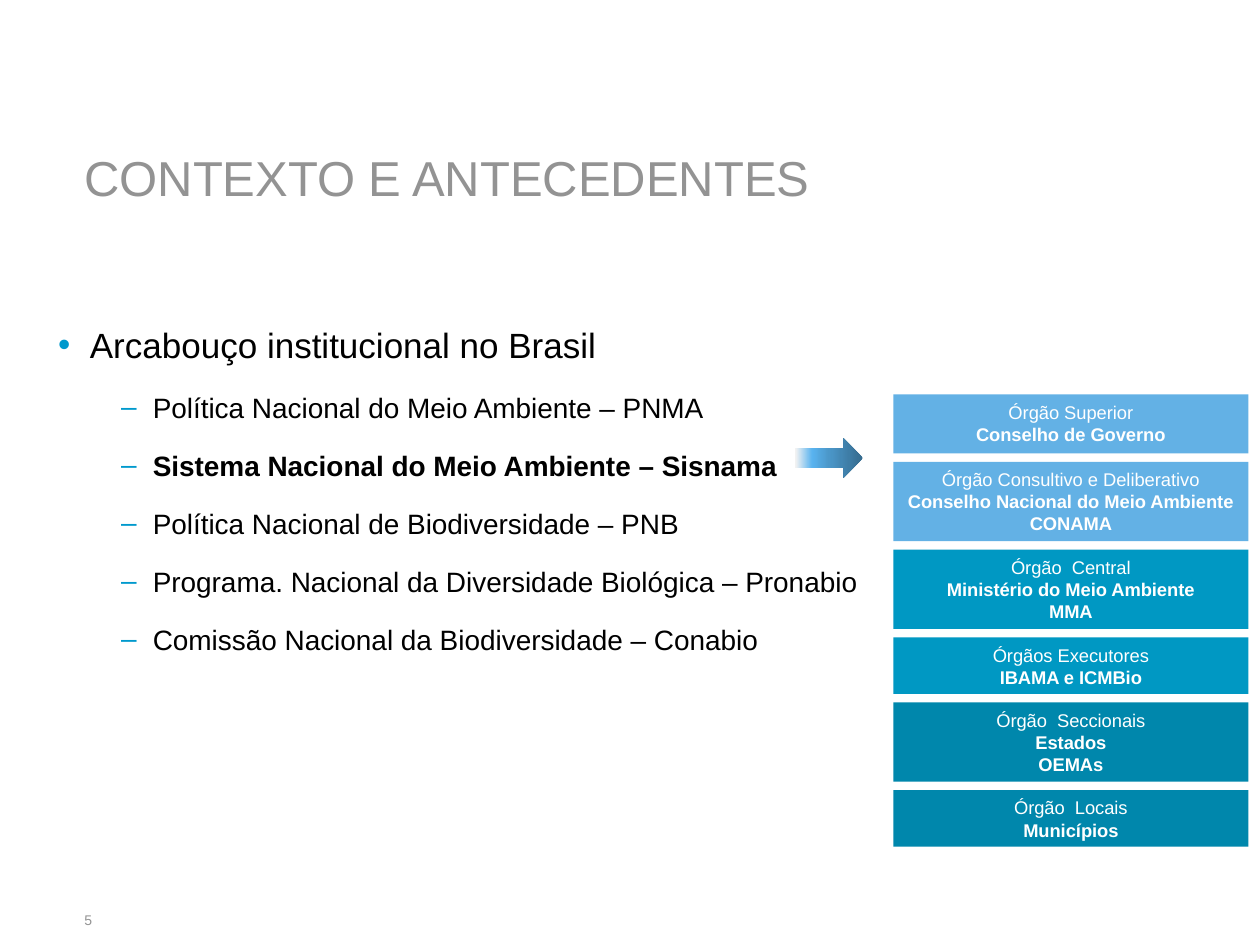
from lxml import etree
from pptx import Presentation, util as u
from pptx.dml.color import RGBColor
from pptx.enum import shapes, text
from pptx.oxml import parse_xml
from pptx.oxml.ns import nsdecls, qn

COLORS = {
    "grey": "939393", "black": "000000", "white": "FFFFFF", "bullet": "0099CD",
    "light": "63B1E5", "mid": "0098C3", "deep": "0087AC",
}
STOPS = [(0, "356A8D"), (50, "4B97C9"), (75, "59B3EF"), (99, "F2F2F2")]

TOPICS = [
    ("Política Nacional do Meio Ambiente – PNMA", False),
    ("Sistema Nacional do Meio Ambiente – Sisnama", True),
    ("Política Nacional de Biodiversidade – PNB", False),
    ("Programa. Nacional da Diversidade Biológica – Pronabio", False),
    ("Comissão Nacional da Biodiversidade – Conabio", False),
]
BODIES = [
    ("light", 1.19, ["Órgão Superior", "Conselho de Governo"]),
    ("light", 1.6, ["Órgão Consultivo e Deliberativo",
                    "Conselho Nacional do Meio Ambiente", "CONAMA"]),
    ("mid", 1.6, ["Órgão  Central", "Ministério do Meio Ambiente", "MMA"]),
    ("mid", 1.14, ["Órgãos Executores", "IBAMA e ICMBio"]),
    ("deep", 1.6, ["Órgão  Seccionais", "Estados", "OEMAs"]),
    ("deep", 1.14, ["Órgão  Locais", "Municípios"]),
]


def apply(item, values):
    for name, value in values.items():
        setattr(item, name, value)


class Deck:
    face = "Arial"

    def __init__(self):
        self.prs = Presentation()
        apply(self.prs, {"slide_width": u.Cm(25.4), "slide_height": u.Cm(19.05)})
        self.slide = self.prs.slides.add_slide(self.prs.slide_layouts[1])

    def place(self, shape, left, top, width, height):
        apply(shape, {"left": u.Cm(left), "top": u.Cm(top),
                      "width": u.Cm(width), "height": u.Cm(height)})

    def frame(self, shape, anchor, inset=0):
        frame = shape.text_frame
        apply(frame, {
            "word_wrap": True, "auto_size": text.MSO_AUTO_SIZE.NONE,
            "vertical_anchor": anchor,
            "margin_left": u.Cm(2 * inset), "margin_right": u.Cm(2 * inset),
            "margin_top": u.Cm(inset), "margin_bottom": u.Cm(inset)})
        return frame

    def label(self, para, words, size, color, bold=False, align=text.PP_ALIGN.LEFT):
        para.alignment = align
        run = para.add_run()
        run.text = words
        apply(run.font, {"name": self.face, "size": u.Pt(size), "bold": bold})
        run.font.color.rgb = RGBColor.from_string(COLORS[color])

    def title(self, words, *box):
        shape = self.slide.shapes.title
        self.place(shape, *box)
        frame = self.frame(shape, text.MSO_ANCHOR.TOP)
        self.label(frame.paragraphs[0], words, 28, "grey")

    def bullet(self, para, mark, indent):
        """Hang the paragraph behind a coloured mark, indent in cm."""
        props = para._p.get_or_add_pPr()
        props.set("marL", str(u.Cm(indent)))
        props.set("indent", str(-u.Cm(0.64)))
        tint = etree.SubElement(props, qn("a:buClr"))
        etree.SubElement(tint, qn("a:srgbClr"), val=COLORS["bullet"])
        etree.SubElement(props, qn("a:buFont"), typeface=self.face)
        etree.SubElement(props, qn("a:buChar"), char=mark)

    def list(self, head, items, *box):
        shape = self.slide.placeholders[1]
        self.place(shape, *box)
        frame = self.frame(shape, text.MSO_ANCHOR.TOP)
        para = frame.paragraphs[0]
        self.bullet(para, "•", 0.64)
        para.space_before = u.Pt(0)
        self.label(para, head, 20, "black")
        for words, bold in items:
            para = frame.add_paragraph()
            self.bullet(para, "–", 1.91)
            apply(para, {"level": 1, "line_spacing": 1.5, "space_before": u.Pt(4.4)})
            self.label(para, words, 16, "black", bold)

    def stack(self, items, left, top, width, gap):
        group = self.slide.shapes.add_group_shape()
        for color, height, lines in items:
            shape = group.shapes.add_shape(
                shapes.MSO_SHAPE.RECTANGLE,
                u.Cm(left), u.Cm(top), u.Cm(width), u.Cm(height))
            shape.shadow.inherit = False
            shape.fill.solid()
            shape.fill.fore_color.rgb = RGBColor.from_string(COLORS[color])
            shape.line.fill.background()
            frame = self.frame(shape, text.MSO_ANCHOR.TOP, 0.13)
            for i, words in enumerate(lines):
                para = frame.add_paragraph() if i else frame.paragraphs[0]
                self.label(para, words, 10.5, "white", i > 0, text.PP_ALIGN.CENTER)
            top += height + gap

    def arrow(self, *box):
        shape = self.slide.shapes.add_shape(
            shapes.MSO_SHAPE.RIGHT_ARROW, *map(u.Cm, box))
        shape.shadow.inherit = False
        shape.line.fill.background()
        stops = "".join(
            f'<a:gs pos="{pos * 1000}"><a:srgbClr val="{color}"/></a:gs>'
            for pos, color in STOPS)
        shape._element.spPr.find(qn("a:prstGeom")).addnext(parse_xml(
            f'<a:gradFill {nsdecls("a")} rotWithShape="1"><a:gsLst>{stops}</a:gsLst>'
            '<a:lin ang="10800000" scaled="0"/></a:gradFill>'))

    def number(self, words, *box):
        shape = self.slide.shapes.add_textbox(*map(u.Cm, box))
        frame = self.frame(shape, text.MSO_ANCHOR.MIDDLE)
        self.label(frame.paragraphs[0], words, 8, "grey")


def main():
    deck = Deck()
    deck.number("5", 1.7, 18.03, 1.07, 1.02)
    deck.title("CONTEXTO E ANTECEDENTES", 1.7, 2.97, 21.84, 2.21)
    deck.list("Arcabouço institucional no Brasil", TOPICS, 1.17, 6.53, 22.53, 10.6)
    deck.stack(BODIES, 18.01, 7.95, 7.16, 0.17)
    deck.arrow(16.03, 8.84, 1.37, 0.79)
    deck.prs.save("out.pptx")


if __name__ == "__main__":
    main()
